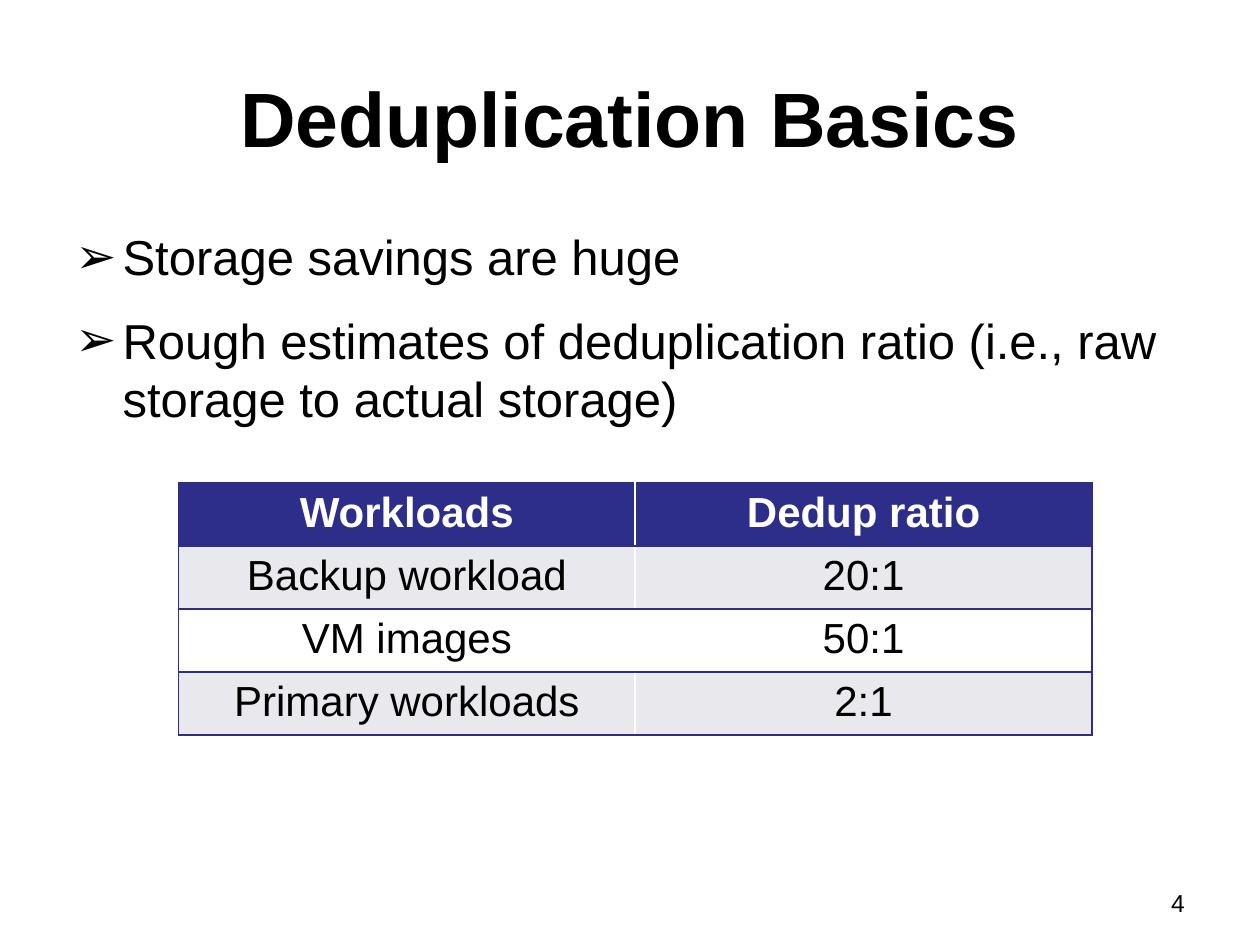
from typing import NamedTuple

from lxml.etree import SubElement as Sub
from pptx import Presentation as Deck
from pptx.dml.color import RGBColor as Color
from pptx.enum.text import MSO_ANCHOR as Anchor, PP_ALIGN as Align
from pptx.oxml.ns import qn
from pptx.util import Pt

BLUE, GRAY, WHITE, BLACK = "2D2D8A", "E8E8ED", "FFFFFF", "000000"


class Row(NamedTuple):
    load: str
    ratio: str
    fill: str
    ink: str = BLACK
    bold: bool = False


ROWS = [
    Row("Workloads", "Dedup ratio", BLUE, WHITE, True),
    Row("Backup workload", "20:1", GRAY),
    Row("VM images", "50:1", WHITE),
    Row("Primary workloads", "2:1", GRAY),
]
POINTS = [
    "Storage savings are huge",
    "Rough estimates of deduplication ratio (i.e., raw storage to actual storage)",
]


def paint(part, tone: str) -> None:
    part.rgb = Color.from_string(tone)


def write(para, text: str, *, size: float, ink: str = BLACK,
          bold: bool = False, align=Align.LEFT, gap: float = 0) -> None:
    para.alignment = align
    para.space_before = Pt(gap)
    run = para.add_run()
    run.text = text
    font = run.font
    font.name, font.size, font.bold = "Arial", Pt(size), bold
    paint(font.color, ink)


def place(shape, left: float, top: float, width: float, height: float) -> None:
    shape.left, shape.top = Pt(left), Pt(top)
    shape.width, shape.height = Pt(width), Pt(height)


def add_box(slide, left: float, top: float, width: float, height: float):
    box = slide.shapes.add_textbox(Pt(left), Pt(top), Pt(width), Pt(height))
    box.text_frame.word_wrap = True
    return box.text_frame


def add_mark(para, mark: str, hang: float) -> None:
    props = para._p.get_or_add_pPr()
    props.set("marL", str(Pt(hang)))
    props.set("indent", str(Pt(-hang)))
    Sub(props, qn("a:buFont"), typeface="Arial")
    Sub(props, qn("a:buChar"), char=mark)


def add_edge(cell, sides: str) -> None:
    props = cell._tc.get_or_add_tcPr()
    for side in sides:
        line = Sub(props, qn(f"a:ln{side}"), w=str(Pt(1)))
        fill = Sub(line, qn("a:solidFill"))
        Sub(fill, qn("a:srgbClr"), val=BLUE)


def add_grid(slide, rows: list[Row]) -> None:
    frame = slide.shapes.add_table(
        len(rows), 2, Pt(102), Pt(276), Pt(522), Pt(29.5 * len(rows)))
    grid = frame.table
    for line, row in zip(grid.rows, rows):
        pairs = zip(line.cells, (row.load, row.ratio), ("LTB", "RTB"))
        for cell, text, sides in pairs:
            add_edge(cell, sides)
            cell.fill.solid()
            paint(cell.fill.fore_color, row.fill)
            write(cell.text_frame.paragraphs[0], text, size=24,
                  ink=row.ink, bold=row.bold, align=Align.CENTER)


def main() -> None:
    deck = Deck()
    deck.slide_width, deck.slide_height = Pt(720), Pt(540)
    slide = deck.slides.add_slide(deck.slide_layouts[5])

    title = slide.shapes.title
    place(title, 36, 21.6, 648, 90)
    title.text_frame.vertical_anchor = Anchor.MIDDLE
    write(title.text_frame.paragraphs[0], "Deduplication Basics",
          size=44, bold=True, align=Align.CENTER)

    body = add_box(slide, 36, 126, 648, 126)
    for i, text in enumerate(POINTS):
        para = body.add_paragraph() if i else body.paragraphs[0]
        write(para, text, size=28, gap=14)
        add_mark(para, "➢", 27)

    add_grid(slide, ROWS)

    page = add_box(slide, 516, 504, 168, 25.2)
    write(page.paragraphs[0], "4", size=14, align=Align.RIGHT)

    deck.save("out.pptx")


if __name__ == "__main__":
    main()
